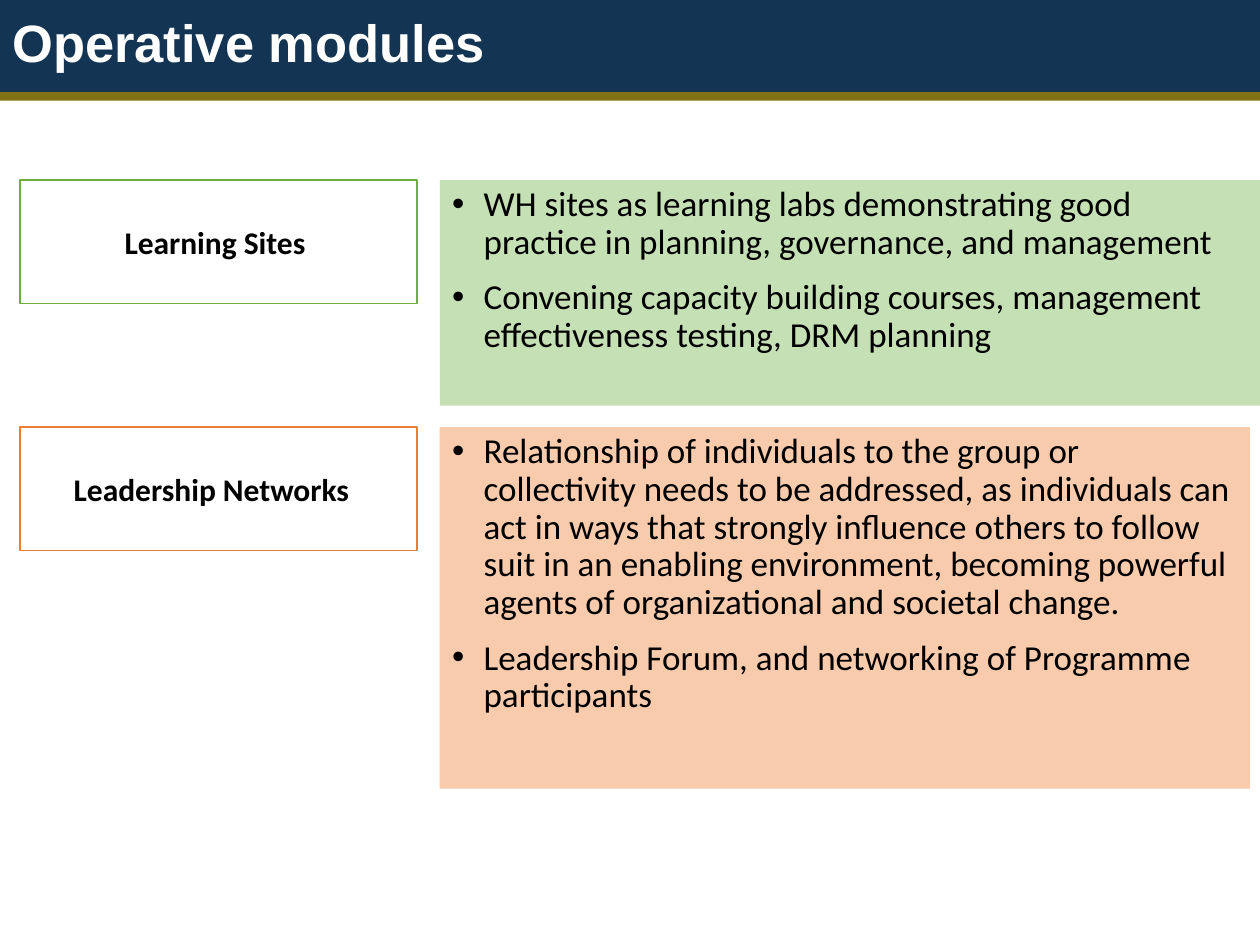
"""Build the "Operative modules" slide: a title band and two labelled module panels."""
from lxml import etree
from pptx import Presentation
from pptx import util as u
from pptx.dml.color import RGBColor
from pptx.enum import shapes, text
from pptx.oxml.ns import qn


def add_box(left, top, width, height, fill=None, line=None, anchor=text.MSO_ANCHOR.MIDDLE):
    box = slide.shapes.add_shape(shapes.MSO_SHAPE.RECTANGLE, u.Inches(left), u.Inches(top),
                                 u.Inches(width), u.Inches(height))
    box.shadow.inherit = False
    for part, color in ((box.fill, fill), (box.line.fill, line)):
        if color:
            part.solid()
            part.fore_color.rgb = RGBColor.from_string(color)
        else:
            part.background()
    if line:
        box.line.width = u.Pt(1)
    box.text_frame.word_wrap = True
    box.text_frame.vertical_anchor = anchor
    return box.text_frame


def add_run(paragraph, words, size, font="Calibri", color="000000", bold=False, align=text.PP_ALIGN.LEFT):
    paragraph.alignment = align
    run = paragraph.add_run()
    run.text = words
    run.font.size = u.Pt(size)
    run.font.name = font
    run.font.bold = bold
    run.font.color.rgb = RGBColor.from_string(color)


modules = [
    ("Learning Sites ", 1.43, "70AD47", "C5E0B4", 6.51, 1.79, [
        "WH sites as learning labs demonstrating good practice in planning, governance, and management",
        "Convening capacity building courses, management effectiveness testing, DRM planning",
    ]),
    ("Leadership Networks  ", 3.39, "ED7D31", "F8CBAD", 6.43, 2.87, [
        "Relationship of individuals to the group or collectivity needs to be addressed, as individuals "
        "can act in ways that strongly influence others to follow suit in an enabling environment, "
        "becoming powerful agents of organizational and societal change.",
        "Leadership Forum, and networking of Programme participants",
    ]),
]

prs = Presentation()
prs.slide_width = u.Inches(10)
prs.slide_height = u.Inches(7.5)
slide = prs.slides.add_slide(prs.slide_layouts[6])

add_box(0, 0.73, 10, 0.07, fill="807215")
heading = add_box(0, 0, 10, 0.73, fill="133453").paragraphs[0]
heading.line_spacing = 0.9
heading.space_before = u.Pt(10)
add_run(heading, "Operative modules", 30, font="Arial", color="FFFFFF", bold=True)

for label, top, outline, tint, width, height, points in modules:
    panel = add_box(3.49, top, width, height, fill=tint, anchor=text.MSO_ANCHOR.TOP)
    for index, point in enumerate(points):
        item = panel.add_paragraph() if index else panel.paragraphs[0]
        item.line_spacing = 0.9
        item.space_before = u.Pt(10)
        add_run(item, point, 20)
        properties = item._p.get_or_add_pPr()
        properties.set("marL", str(u.Inches(0.25)))
        properties.set("indent", str(u.Inches(-0.25)))
        etree.SubElement(properties, qn("a:buFont"), typeface="Arial")
        etree.SubElement(properties, qn("a:buChar"), char="•")
    name = add_box(0.16, top, 3.15, 0.98, line=outline).paragraphs[0]
    add_run(name, label, 18, bold=True, align=text.PP_ALIGN.CENTER)

prs.save("out.pptx")
